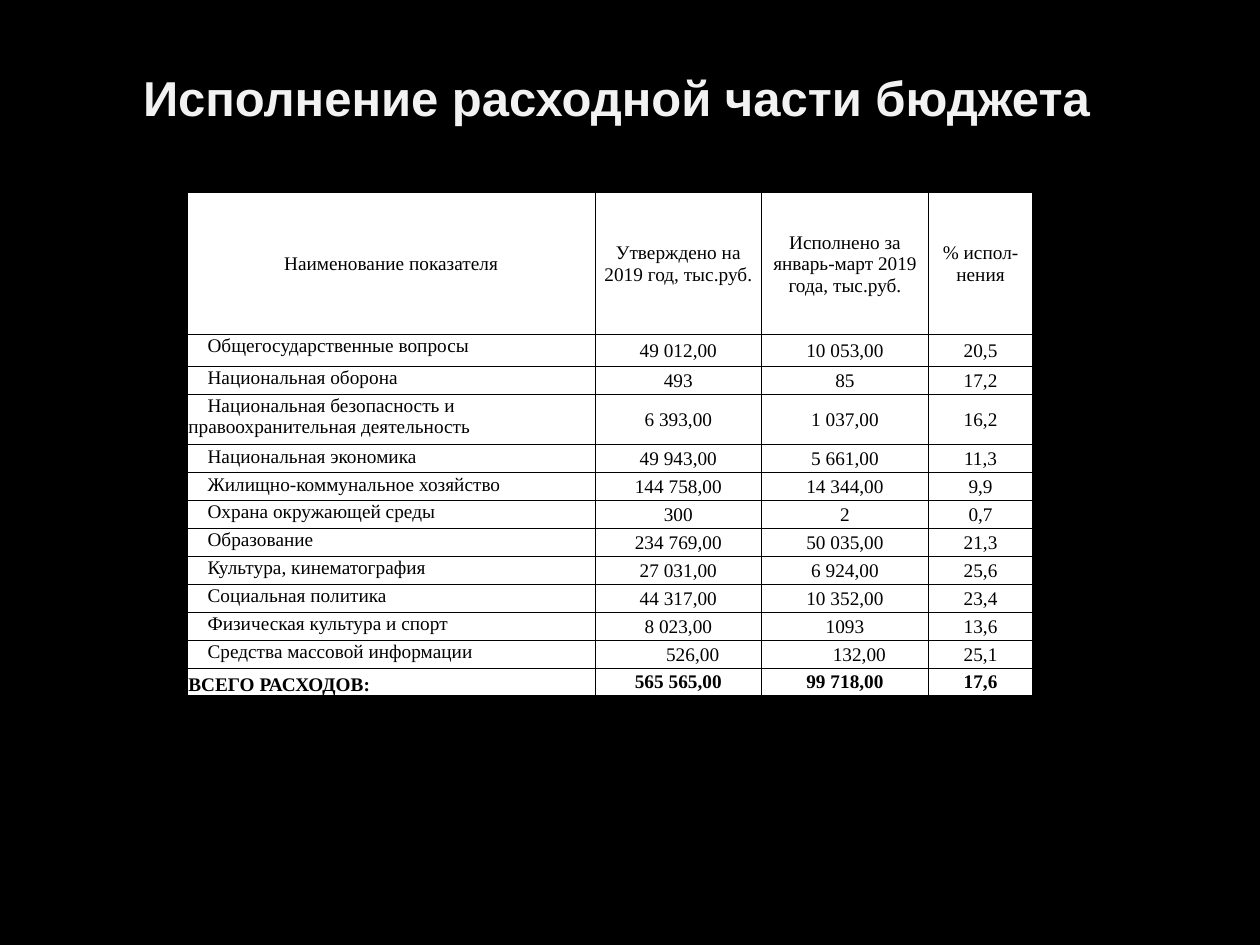
from dataclasses import dataclass
from lxml.etree import SubElement as Sub
from pptx import Presentation as Deck
from pptx.dml.color import RGBColor as RGB
from pptx.enum.text import MSO_ANCHOR as Anchor, PP_ALIGN as Align
from pptx.oxml.ns import qn
from pptx.util import Pt


@dataclass
class Theme:
    back: str = "000000"
    head: str = "F2F2F2"
    ink: str = "000000"
    fill: str = "FFFFFF"
    rule: str = "000000"
    head_size: int = 28
    cell_size: int = 11
    head_font: str = "Arial"
    cell_font: str = "Times New Roman"


look = Theme()


def add_run(para, text, font, size, color, bold):
    run = para.add_run()
    run.text = text
    run.font.name = font
    run.font.size = Pt(size)
    run.font.bold = bold
    run.font.color.rgb = RGB.from_string(color)


def add_rules(cell):
    props = cell._tc.get_or_add_tcPr()
    for side in ("lnL", "lnR", "lnT", "lnB"):
        line = Sub(props, qn(f"a:{side}"), w=str(Pt(0.5)))
        paint = Sub(line, qn("a:solidFill"))
        Sub(paint, qn("a:srgbClr"), val=look.rule)


rows = [
    ("Наименование показателя", "Утверждено на 2019 год, тыс.руб.",
     "Исполнено за январь-март 2019 года, тыс.руб.", "% испол-нения"),
    ("Общегосударственные вопросы", "49 012,00", "10 053,00", "20,5"),
    ("Национальная оборона", "493", "85", "17,2"),
    ("Национальная безопасность и правоохранительная деятельность",
     "6 393,00", "1 037,00", "16,2"),
    ("Национальная экономика", "49 943,00", "5 661,00", "11,3"),
    ("Жилищно-коммунальное хозяйство", "144 758,00", "14 344,00", "9,9"),
    ("Охрана окружающей среды", "300", "2", "0,7"),
    ("Образование", "234 769,00", "50 035,00", "21,3"),
    ("Культура, кинематография", "27 031,00", "6 924,00", "25,6"),
    ("Социальная политика", "44 317,00", "10 352,00", "23,4"),
    ("Физическая культура и спорт", "8 023,00", "1093", "13,6"),
    ("Средства массовой информации", "526,00", "132,00", "25,1"),
    ("ВСЕГО РАСХОДОВ:", "565 565,00", "99 718,00", "17,6"),
]
last = len(rows) - 1
media = last - 1
widths = [233, 95.25, 95.25, 59.75]
heights = [81.25, 18.25, 15.75, 29] + [15.95] * (len(rows) - 4)

deck = Deck()
deck.slide_width, deck.slide_height = Pt(720), Pt(540)
slide = deck.slides.add_slide(deck.slide_layouts[5])
slide.background.fill.solid()
slide.background.fill.fore_color.rgb = RGB.from_string(look.back)

title = slide.shapes.title
title.left, title.top, title.width, title.height = Pt(36), Pt(21), Pt(648), Pt(69)
frame = title.text_frame
frame.vertical_anchor = Anchor.MIDDLE
frame.margin_right = Pt(22.8)
para = frame.paragraphs[0]
para.alignment = Align.CENTER
add_run(para, "Исполнение расходной части бюджета",
        look.head_font, look.head_size, look.head, True)

table = slide.shapes.add_table(len(rows), len(widths), Pt(107), Pt(110),
                               Pt(sum(widths)), Pt(sum(heights))).table
for col, width in zip(table.columns, widths):
    col.width = Pt(width)
for row, height in zip(table.rows, heights):
    row.height = Pt(height)

for r, row in enumerate(rows):
    for c, text in enumerate(row):
        cell = table.cell(r, c)
        add_rules(cell)
        cell.fill.solid()
        cell.fill.fore_color.rgb = RGB.from_string(look.fill)
        cell.margin_left = cell.margin_right = cell.margin_top = Pt(0.6)
        cell.margin_bottom = Pt(0)
        para = cell.text_frame.paragraphs[0]
        add_run(para, text, look.cell_font, look.cell_size, look.ink, r == last)
        if c > 0 or r == 0:
            cell.vertical_anchor = Anchor.MIDDLE
            para.alignment = Align.CENTER
            if r == media and c < 3:
                cell.margin_left = Pt(17)
        else:
            cell.vertical_anchor = Anchor.BOTTOM if r == last else Anchor.TOP
            para.alignment = Align.LEFT
            if r < last:
                para._p.get_or_add_pPr().set("indent", str(Pt(11)))

deck.save("out.pptx")
